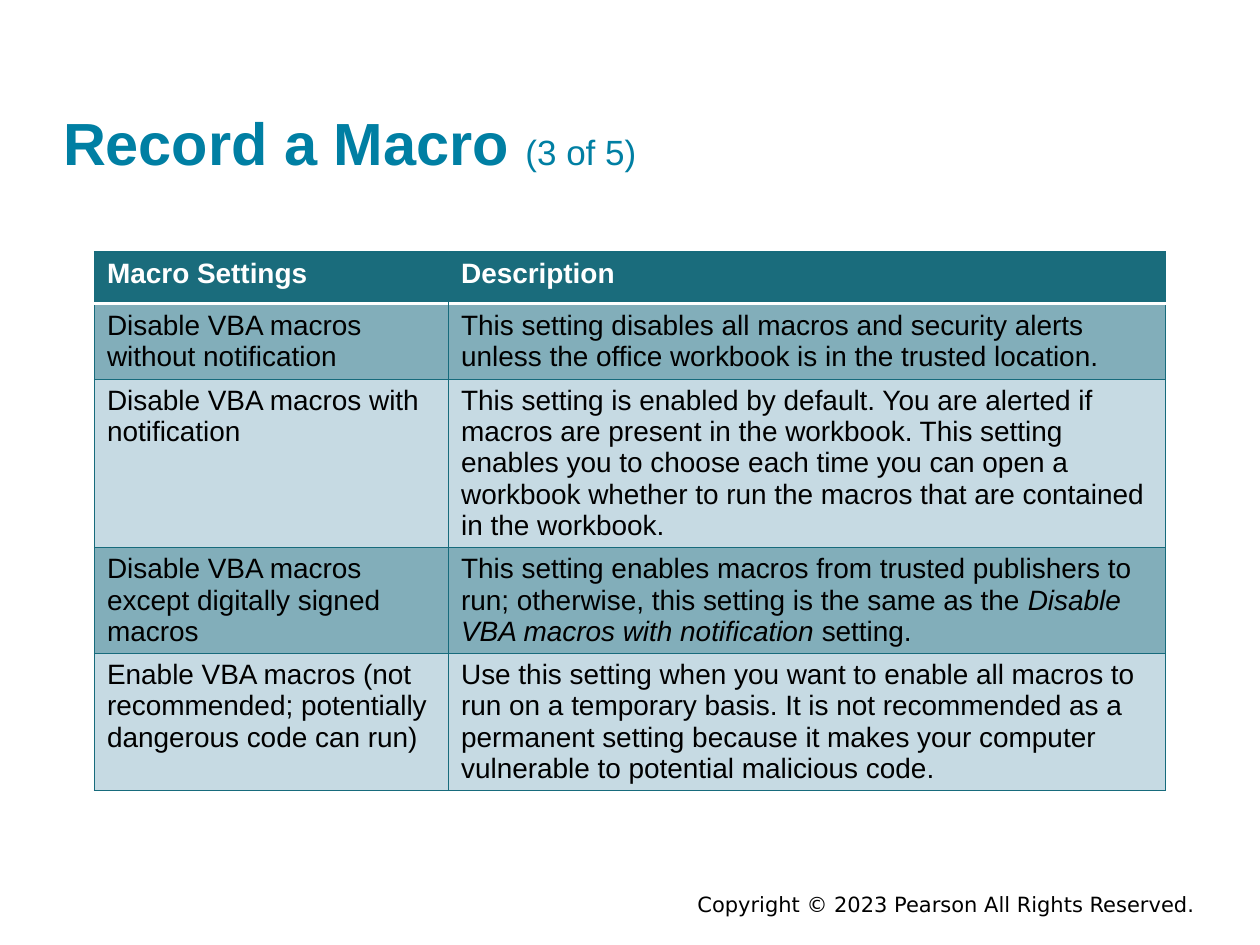
from lxml import etree
from pptx import Presentation
from pptx.dml.color import RGBColor
from pptx.enum.text import MSO_ANCHOR, PP_ALIGN
from pptx.oxml.ns import qn
from pptx.util import Inches, Pt

BLUE = RGBColor(0x00, 0x7F, 0xA3)
HEADER_TEAL = RGBColor(0x1A, 0x6C, 0x7C)
BORDER_TEAL = RGBColor(0x17, 0x6B, 0x7C)
BAND_DARK = RGBColor(0x82, 0xAE, 0xBA)
BAND_LIGHT = RGBColor(0xC6, 0xDA, 0xE3)
WHITE = RGBColor(0xFF, 0xFF, 0xFF)
BLACK = RGBColor(0x00, 0x00, 0x00)

COLUMN_WIDTHS = [2.81, 5.69]
ROW_HEIGHTS = [0.41, 0.6, 1.33, 0.84, 1.09]
# A cell is a list of runs; every second run is italic.
ROWS = [
    [["Macro Settings"], ["Description"]],
    [["Disable VBA macros without notification"],
     ["This setting disables all macros and security alerts unless the "
      "office workbook is in the trusted location."]],
    [["Disable VBA macros with notification"],
     ["This setting is enabled by default. You are alerted if macros are "
      "present in the workbook. This setting enables you to choose each time "
      "you can open a workbook whether to run the macros that are contained "
      "in the workbook."]],
    [["Disable VBA macros except digitally signed macros"],
     ["This setting enables macros from trusted publishers to run; otherwise, "
      "this setting is the same as the ",
      "Disable VBA macros with notification ", "setting."]],
    [["Enable VBA macros (not recommended; potentially dangerous code can run)"],
     ["Use this setting when you want to enable all macros to run on a "
      "temporary basis. It is not recommended as a permanent setting because "
      "it makes your computer vulnerable to potential malicious code."]],
]


def add_run(paragraph, text, color, **font_format):
    run = paragraph.add_run()
    run.text = text
    run.font.color.rgb = color
    for name, value in font_format.items():
        setattr(run.font, name, value)


def add_border(cell, side, color, width):
    """Draw one side (L, R, T or B); call in that order, before the fill."""
    line = etree.SubElement(cell._tc.get_or_add_tcPr(), qn(f"a:ln{side}"), w=str(Pt(width)))
    fill = etree.SubElement(line, qn("a:solidFill"))
    etree.SubElement(fill, qn("a:srgbClr"), val=str(color))


presentation = Presentation()
presentation.slide_width = Inches(10)
presentation.slide_height = Inches(7.5)
slide = presentation.slides.add_slide(presentation.slide_layouts[5])

# Title
title = slide.shapes.title
title.left, title.top, title.width, title.height = map(Inches, (0.5, 0.21, 9, 1.2))
title_format = dict(margin_left=0, margin_top=0, margin_right=0, margin_bottom=0,
                    vertical_anchor=MSO_ANCHOR.BOTTOM, word_wrap=True)
for name, value in title_format.items():
    setattr(title.text_frame, name, value)
paragraph = title.text_frame.paragraphs[0]
paragraph.alignment = PP_ALIGN.LEFT
add_run(paragraph, "Record a Macro ", BLUE, name="Arial", size=Pt(34), bold=True)
add_run(paragraph, "(3 of 5)", BLUE, name="Arial", size=Pt(20), bold=False)

# Settings table
table = slide.shapes.add_table(
    len(ROWS), len(COLUMN_WIDTHS), Inches(0.75), Inches(2),
    Inches(sum(COLUMN_WIDTHS)), Inches(sum(ROW_HEIGHTS))).table
for column, width in zip(table.columns, COLUMN_WIDTHS):
    column.width = Inches(width)

for row_index, (row, height) in enumerate(zip(ROWS, ROW_HEIGHTS)):
    table.rows[row_index].height = Inches(height)
    is_header = row_index == 0
    if is_header:
        fill_color = HEADER_TEAL
    else:
        fill_color = BAND_DARK if row_index % 2 else BAND_LIGHT
    for column_index, runs in enumerate(row):
        cell = table.cell(row_index, column_index)
        for side in "LRTB":
            under_header = (row_index, side) in [(0, "B"), (1, "T")]
            inside_header = is_header and (column_index, side) in [(0, "R"), (1, "L")]
            if under_header:
                add_border(cell, side, WHITE, 2)
            elif inside_header:
                add_border(cell, side, HEADER_TEAL, 0.75)
            else:
                add_border(cell, side, BORDER_TEAL, 0.75)
        cell.fill.solid()
        cell.fill.fore_color.rgb = fill_color
        for run_index, text in enumerate(runs):
            add_run(cell.text_frame.paragraphs[0], text, WHITE if is_header else BLACK,
                    name="Arial", size=Pt(16), bold=is_header, italic=run_index % 2 == 1)

# Copyright line
copyright_box = slide.shapes.add_textbox(Inches(1.75), Inches(7.03), Inches(7.83), Inches(0.3))
copyright_box.text_frame.word_wrap = True
paragraph = copyright_box.text_frame.paragraphs[0]
paragraph.alignment = PP_ALIGN.RIGHT
add_run(paragraph, "Copyright © 2023 Pearson All Rights Reserved.", BLACK,
        name="DejaVu Sans", size=Pt(12))

presentation.save("out.pptx")
